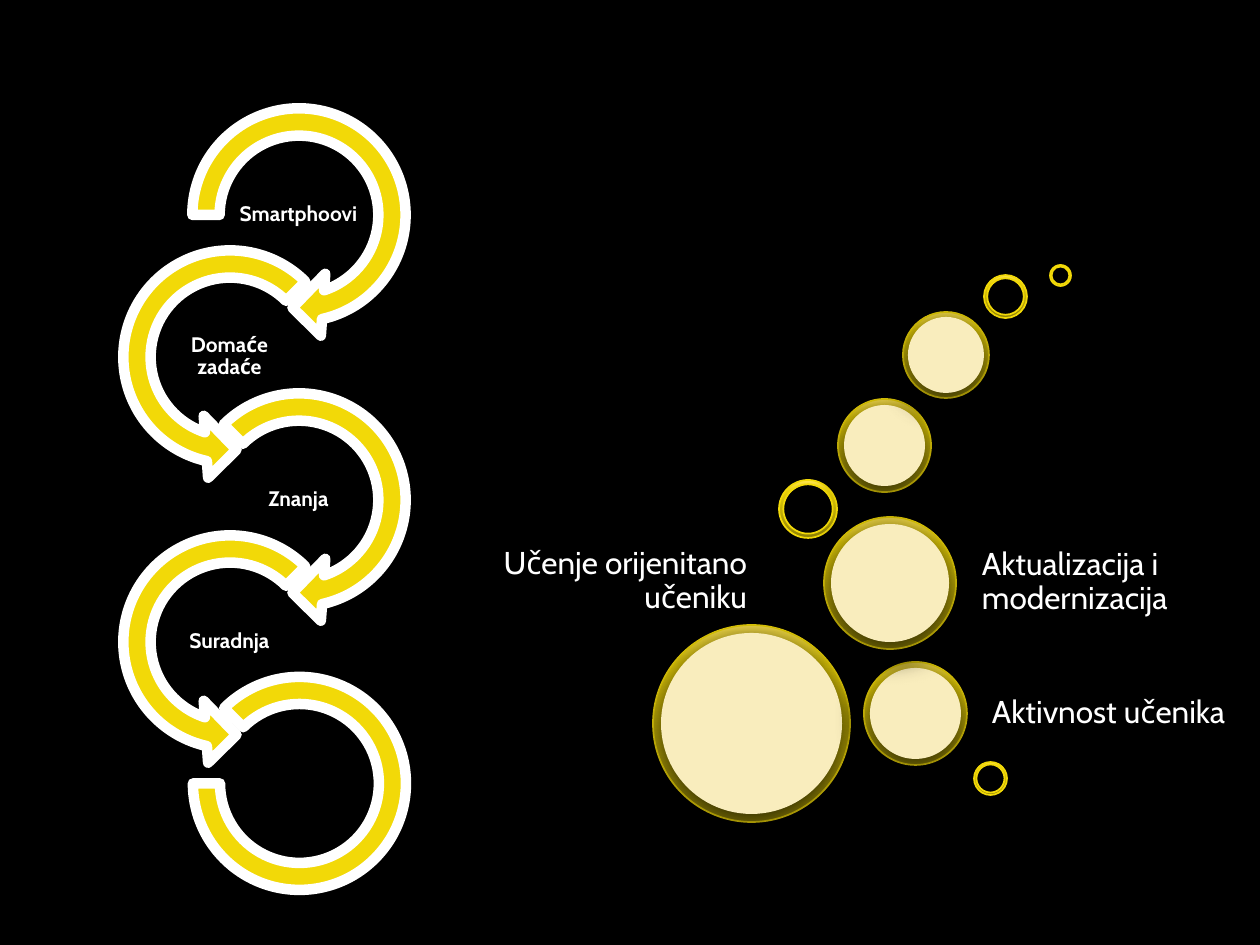
from dataclasses import dataclass

from lxml import etree
from pptx import Presentation
from pptx.dml.color import RGBColor
from pptx.enum.shapes import MSO_SHAPE
from pptx.enum.text import MSO_ANCHOR, PP_ALIGN
from pptx.oxml.ns import qn
from pptx.util import Emu, Pt

RIGHT_ARROW = MSO_SHAPE.CIRCULAR_ARROW
LEFT_ARROW = MSO_SHAPE.LEFT_CIRCULAR_ARROW
BLOCK_ARC = MSO_SHAPE.BLOCK_ARC
DISC = MSO_SHAPE.OVAL
RING = MSO_SHAPE.DONUT
MIDDLE, BOTTOM = MSO_ANCHOR.MIDDLE, MSO_ANCHOR.BOTTOM
LEFT, CENTER, RIGHT = PP_ALIGN.LEFT, PP_ALIGN.CENTER, PP_ALIGN.RIGHT

PX_PER_INCH = 126


@dataclass(frozen=True)
class Theme:
    background: str = "000000"
    text: str = "FFFFFF"
    yellow: str = "F2D908"
    outline: str = "FFFFFF"
    cream: str = "F9EDBD"
    shadow: str = "000000"
    gold: tuple = ((0, "8F8105"), (80, "E7CF08"), (100, "FFE552"))
    font: str = "Cabin"
    step_size: int = 12
    label_size: int = 18
    arrow_line: int = 6
    bubble_line: int = 1


def px(length):
    return Emu(round(length * 914400 / PX_PER_INCH))


def rgb(color):
    return RGBColor.from_string(color)


class Deck:
    def __init__(self, theme, width, height):
        self.theme = theme
        self.presentation = Presentation()
        self.presentation.slide_width = px(width)
        self.presentation.slide_height = px(height)
        self.slide = self.presentation.slides.add_slide(self.presentation.slide_layouts[6])
        background = self.slide.background.fill
        background.solid()
        background.fore_color.rgb = rgb(theme.background)

    def _square(self, preset, left, top, size, adjustments=()):
        shape = self.slide.shapes.add_shape(preset, px(left), px(top), px(size), px(size))
        for index, value in enumerate(adjustments):
            shape.adjustments[index] = value
        shape.shadow.inherit = False
        return shape

    def _paint(self, shape, color):
        shape.fill.solid()
        shape.fill.fore_color.rgb = rgb(color)

    def _outline(self, shape, color, width):
        shape.line.color.rgb = rgb(color)
        shape.line.width = Pt(width)

    def _gild(self, shape):
        shape.fill.gradient()
        shape.fill.gradient_angle = 90
        stops = shape._element.spPr.find(".//" + qn("a:gsLst"))
        for stop in list(stops):
            stops.remove(stop)
        for position, color in self.theme.gold:
            stop = etree.SubElement(stops, qn("a:gs"), pos=str(position * 1000))
            etree.SubElement(stop, qn("a:srgbClr"), val=color)
        self._outline(shape, self.theme.yellow, self.theme.bubble_line)

    def _cast_shadow(self, shape):
        effects = shape._element.spPr.find(qn("a:effectLst"))
        shadow = etree.SubElement(
            effects, qn("a:outerShdw"), blurRad=str(Pt(18)), dist=str(Pt(3)),
            dir="5400000", rotWithShape="0")
        color = etree.SubElement(shadow, qn("a:srgbClr"), val=self.theme.shadow)
        etree.SubElement(color, qn("a:alpha"), val="80000")

    def arrow(self, preset, left, top, size, adjustments):
        arrow = self._square(preset, left, top, size, adjustments)
        self._paint(arrow, self.theme.yellow)
        self._outline(arrow, self.theme.outline, self.theme.arrow_line)

    def ring(self, left, top, size):
        ring = self._square(RING, left, top, size, [0.075])
        self._gild(ring)
        self._cast_shadow(ring)

    def bubble(self, left, top, size, rim):
        edge = self._square(DISC, left, top, size)
        self._gild(edge)
        self._cast_shadow(edge)
        center = self._square(DISC, left + rim, top + rim, size - 2 * rim)
        self._paint(center, self.theme.cream)
        center.line.fill.background()
        self._cast_shadow(center)

    def text(self, words, left, top, width, height, size, align, anchor=MIDDLE, inset=4, bold=False):
        frame = self.slide.shapes.add_textbox(px(left), px(top), px(width), px(height)).text_frame
        frame.word_wrap = True
        frame.vertical_anchor = anchor
        frame.margin_left = frame.margin_right = frame.margin_top = px(inset)
        frame.margin_bottom = px(0 if anchor == BOTTOM else inset)
        paragraph = frame.paragraphs[0]
        paragraph.text = words
        paragraph.alignment = align
        paragraph.line_spacing = 0.9
        font = paragraph.font
        font.name = self.theme.font
        font.size = Pt(size)
        font.bold = bold
        font.color.rgb = rgb(self.theme.text)

    def save(self):
        self.presentation.save("out.pptx")


STEPS = [
    ("Smartphoovi", RIGHT_ARROW, 45, 108),
    ("Domaće zadaće", LEFT_ARROW, 63, 189),
    ("Znanja", RIGHT_ARROW, 45, 135),
    ("Suradnja", LEFT_ARROW, 63, 189),
]
STEP_LEFT = {RIGHT_ARROW: 175, LEFT_ARROW: 106}
STEP_TOP, STEP_PITCH, STEP_SIZE = 91, 142.4, 248

RINGS = [(779, 480, 58), (984, 275, 43), (1050, 265, 21), (974, 762, 33)]
BUBBLES = [
    (653, 625, 197, 8),
    (864, 662, 103, 6),
    (824, 517, 132, 7),
    (838, 399, 93, 6),
    (903, 312, 86, 5),
]
LABELS = [
    ("Učenje orijenitano učeniku", 459, 523, 92, RIGHT, BOTTOM),
    ("Aktivnost učenika", 988, 668, 91, LEFT, MIDDLE),
    ("Aktualizacija i modernizacija", 978, 523, 118, LEFT, MIDDLE),
]
LABEL_WIDTH = 292


def main():
    theme = Theme()
    deck = Deck(theme, 1260, 945)
    for index, (step, preset, end, start) in enumerate(STEPS):
        left = STEP_LEFT[preset]
        top = round(STEP_TOP + index * STEP_PITCH)
        deck.arrow(preset, left, top, STEP_SIZE, [0.11, 11.42, end, start, 0.125])
        deck.text(step, left + 54, top + 89, 139, 69, theme.step_size, CENTER, inset=1, bold=True)
    deck.arrow(BLOCK_ARC, 193, 677, 213, [135, 108, 0.127])

    for ring in RINGS:
        deck.ring(*ring)
    for bubble in BUBBLES:
        deck.bubble(*bubble)
    for label, left, top, height, align, anchor in LABELS:
        deck.text(label, left, top, LABEL_WIDTH, height, theme.label_size, align, anchor)
    deck.save()


if __name__ == "__main__":
    main()
